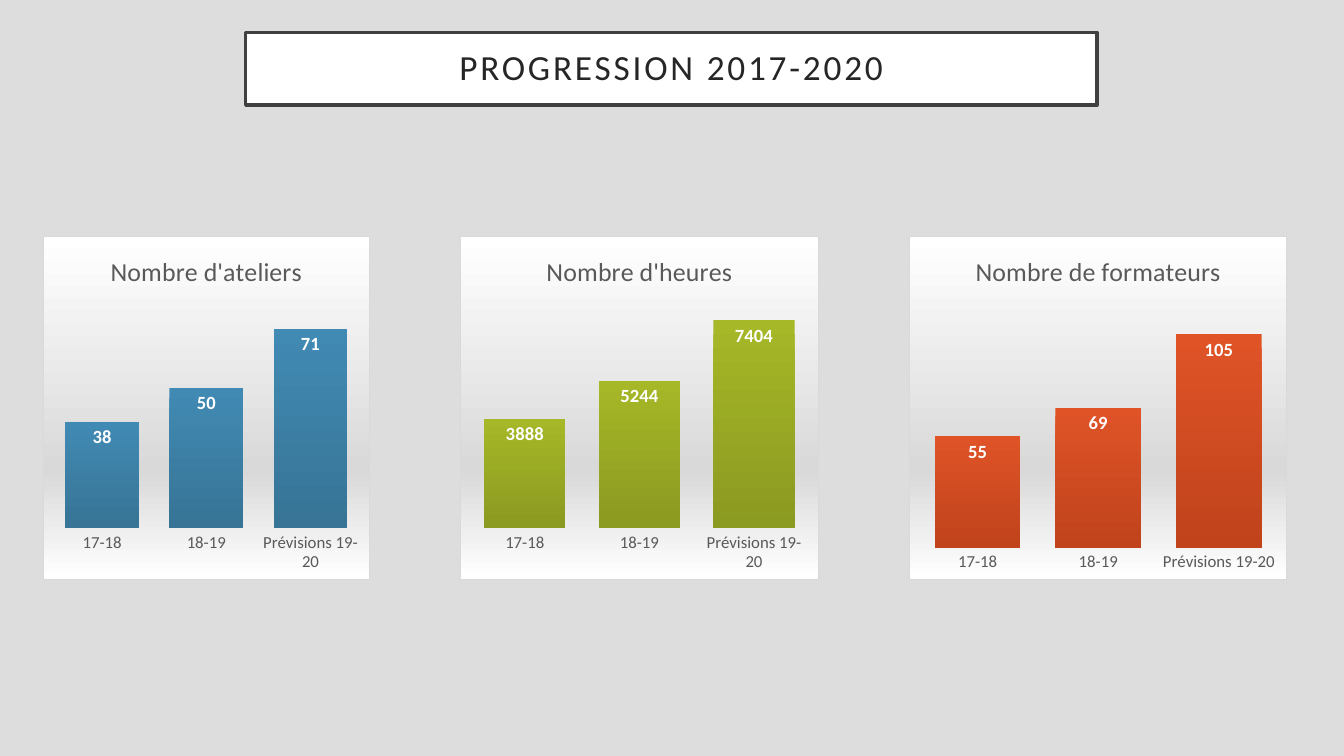
from lxml import etree
from pptx import Presentation
from pptx.chart.data import CategoryChartData
from pptx.dml.color import RGBColor
from pptx.enum.chart import XL_CHART_TYPE, XL_LABEL_POSITION, XL_TICK_MARK
from pptx.enum.shapes import MSO_SHAPE
from pptx.enum.text import MSO_ANCHOR, PP_ALIGN
from pptx.oxml import parse_xml
from pptx.oxml.ns import nsdecls, qn
from pptx.util import Pt

COLUMNS = XL_CHART_TYPE.COLUMN_CLUSTERED
INSIDE_END = XL_LABEL_POSITION.INSIDE_END
NO_TICK = XL_TICK_MARK.NONE
PX = 9525  # EMU per px on a 1280 x 720 page

THEME = {
    "font": "Calibri",
    "page": "DDDDDD", "box": "FFFFFF", "frame": "404040", "heading": "262626",
    "chart_text": "595959", "label": "FFFFFF", "border": "D9D9D9",
    "panel": [(0, "FFFFFF"), (68, "D9D9D9"), (100, "FFFFFF")],
    "heading_size": 25.2, "title_size": 18.6, "label_size": 13.3, "axis_size": 12,
}


def set_font(font, size, color, bold=False):
    font.name = THEME["font"]
    font.size = Pt(size)
    font.bold = bold
    font.color.rgb = RGBColor.from_string(color)


def vertical_gradient(stops):
    marks = "".join(
        f'<a:gs pos="{percent * 1000}"><a:srgbClr val="{color}"/></a:gs>'
        for percent, color in stops)
    return parse_xml(
        f'<a:gradFill {nsdecls("a")} rotWithShape="1"><a:gsLst>{marks}</a:gsLst>'
        '<a:lin ang="5400000" scaled="0"/></a:gradFill>')


# Page
deck = Presentation()
deck.slide_width, deck.slide_height = 1280 * PX, 720 * PX
page = deck.slides.add_slide(deck.slide_layouts[6])
page.background.fill.solid()
page.background.fill.fore_color.rgb = RGBColor.from_string(THEME["page"])

# Heading box
box = page.shapes.add_shape(MSO_SHAPE.RECTANGLE, 234 * PX, 31 * PX, 811 * PX, 69 * PX)
box.shadow.inherit = False
box.fill.solid()
box.fill.fore_color.rgb = RGBColor.from_string(THEME["box"])
box.line.color.rgb = RGBColor.from_string(THEME["frame"])
box.line.width = Pt(2.5)
frame = box.text_frame
frame.word_wrap = True
frame.vertical_anchor = MSO_ANCHOR.MIDDLE
frame.margin_left = frame.margin_right = frame.margin_top = frame.margin_bottom = 19 * PX
para = frame.paragraphs[0]
para.alignment = PP_ALIGN.CENTER
para.line_spacing = 0.9
span = para.add_run()
span.text = "PROGRESSION 2017-2020"
set_font(span.font, THEME["heading_size"], THEME["heading"])
span.font._element.set("spc", "200")  # letter spacing, 2 pt

# Charts: title, left, width, values, axis maximum, bar colours
YEARS = ["17-18", "18-19", "Prévisions 19-20"]
CHARTS = [
    ("Nombre d'ateliers", 41, 311, (38, 50, 71), 80, ("418AB3", "377496")),
    ("Nombre d'heures", 438, 342, (3888, 5244, 7404), 8000, ("A6B727", "8B9A21")),
    ("Nombre de formateurs", 866, 360, (55, 69, 105), 120, ("DF5327", "C0431C")),
]
for title, left, width, values, maximum, (top_color, bottom_color) in CHARTS:
    data = CategoryChartData()
    data.categories = YEARS
    data.add_series(title, values)
    chart = page.shapes.add_chart(
        COLUMNS, left * PX, 225 * PX, width * PX, 327 * PX, data).chart
    chart.has_legend = False
    chart.font.name = THEME["font"]
    chart.font.size = Pt(10)

    # Chart title
    chart.has_title = True
    chart.chart_title.include_in_layout = False
    para = chart.chart_title.text_frame.paragraphs[0]
    para.text = title
    set_font(para.font, THEME["title_size"], THEME["chart_text"])

    # Axes
    years_axis, value_axis = chart.category_axis, chart.value_axis
    set_font(years_axis.tick_labels.font, THEME["axis_size"], THEME["chart_text"])
    years_axis.major_tick_mark = years_axis.minor_tick_mark = NO_TICK
    years_axis.format.line.fill.background()
    value_axis.minimum_scale, value_axis.maximum_scale = 0, maximum
    value_axis.has_major_gridlines = False
    value_axis.visible = False

    # Bars and their labels
    plot = chart.plots[0]
    plot.gap_width = 41
    plot.vary_by_categories = False
    bars = plot.series[0]
    bars.format.line.fill.background()
    bars._element.spPr.insert(
        0, vertical_gradient([(0, top_color), (100, bottom_color)]))
    labels = bars.data_labels
    labels.show_value = True
    labels.position = INSIDE_END
    set_font(labels.font, THEME["label_size"], THEME["label"], bold=True)

    # Panel behind the chart
    panel = parse_xml(f'<c:spPr {nsdecls("c", "a")}/>')
    panel.append(vertical_gradient(THEME["panel"]))
    border = etree.SubElement(panel, qn("a:ln"), w=str(Pt(0.75)))
    solid = etree.SubElement(border, qn("a:solidFill"))
    etree.SubElement(solid, qn("a:srgbClr"), val=THEME["border"])
    chart._chartSpace.find(qn("c:chart")).addnext(panel)

deck.save("out.pptx")
